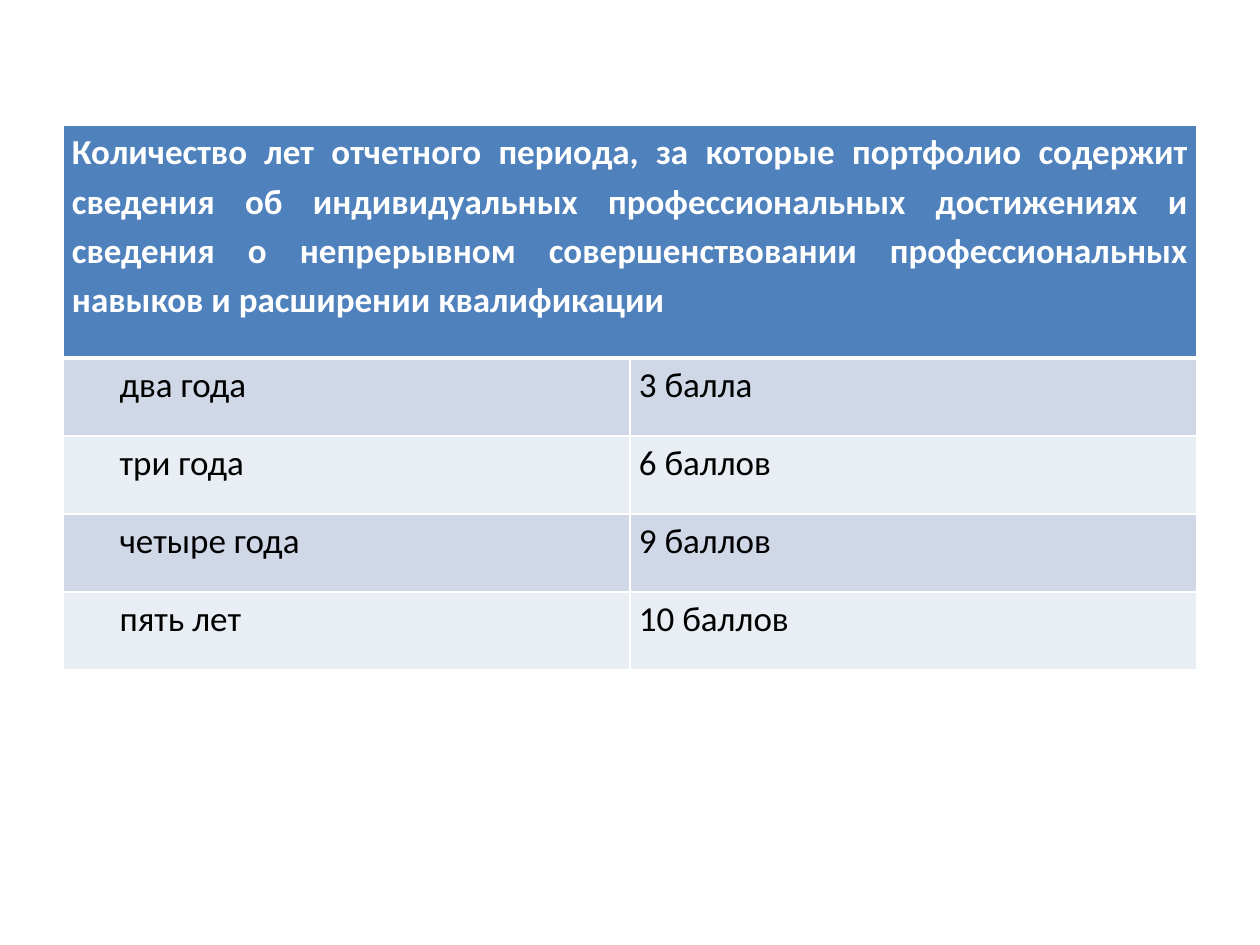
"""Build a slide with a table of portfolio points by years covered."""
from dataclasses import dataclass

from lxml.etree import SubElement
from pptx import Presentation
from pptx.dml.color import RGBColor as RGB
from pptx.enum.text import PP_ALIGN as Align
from pptx.oxml.ns import qn
from pptx.util import Cm, Pt


@dataclass(frozen=True)
class Theme:
    font: str = "Calibri"
    size: int = 20
    header: str = "4F81BD"
    bands: tuple = ("D0D8E8", "E9EDF4")
    light: str = "FFFFFF"
    dark: str = "000000"
    rule: int = 1
    header_rule: int = 3


theme = Theme()


def write(cell, text, *, color=theme.dark, bold=False, align=Align.LEFT, indent=0):
    cell.margin_left = cell.margin_right = Cm(0.18)
    cell.margin_top = cell.margin_bottom = 0
    paragraph = cell.text_frame.paragraphs[0]
    paragraph.alignment = align
    paragraph.line_spacing = 1.15
    if indent:
        paragraph._p.get_or_add_pPr().set("indent", str(Cm(indent)))
    run = paragraph.add_run()
    run.text = text
    run.font.name = theme.font
    run.font.size = Pt(theme.size)
    run.font.bold = bold
    run.font.color.rgb = RGB.from_string(color)


def paint(cell, fill, top=theme.rule, bottom=theme.rule):
    properties = cell._tc.get_or_add_tcPr()
    widths = {"a:lnL": theme.rule, "a:lnR": theme.rule, "a:lnT": top, "a:lnB": bottom}
    for side, width in widths.items():
        line = SubElement(properties, qn(side), w=str(Pt(width)))
        SubElement(SubElement(line, qn("a:solidFill")), qn("a:srgbClr"), val=theme.light)
    cell.fill.solid()
    cell.fill.fore_color.rgb = RGB.from_string(fill)


heading = (
    "Количество лет отчетного периода, за которые портфолио содержит сведения "
    "об индивидуальных профессиональных достижениях и сведения о непрерывном "
    "совершенствовании профессиональных навыков и расширении квалификации"
)
scores = [
    ("два года", "3 балла"),
    ("три года", "6 баллов"),
    ("четыре года", "9 баллов"),
    ("пять лет", "10 баллов"),
]
header_height, score_height = Cm(4.7), Cm(1.57)

deck = Presentation()
deck.slide_width, deck.slide_height = Cm(25.4), Cm(19.05)
slide = deck.slides.add_slide(deck.slide_layouts[6])
table = slide.shapes.add_table(
    len(scores) + 1, 2, Cm(1.27), Cm(2.52), Cm(22.86),
    header_height + score_height * len(scores),
).table

table.rows[0].height = header_height
for header_cell in table.rows[0].cells:
    paint(header_cell, theme.header, bottom=theme.header_rule)
table.cell(0, 0).merge(table.cell(0, 1))
write(table.cell(0, 0), heading, color=theme.light, bold=True, align=Align.JUSTIFY)

for number, (period, points) in enumerate(scores, start=1):
    table.rows[number].height = score_height
    period_cell, points_cell = table.rows[number].cells
    for score_cell in (period_cell, points_cell):
        paint(score_cell, theme.bands[(number - 1) % 2],
              top=theme.header_rule if number == 1 else theme.rule)
    write(period_cell, period, align=Align.JUSTIFY, indent=0.96)
    write(points_cell, points)

deck.save("out.pptx")
